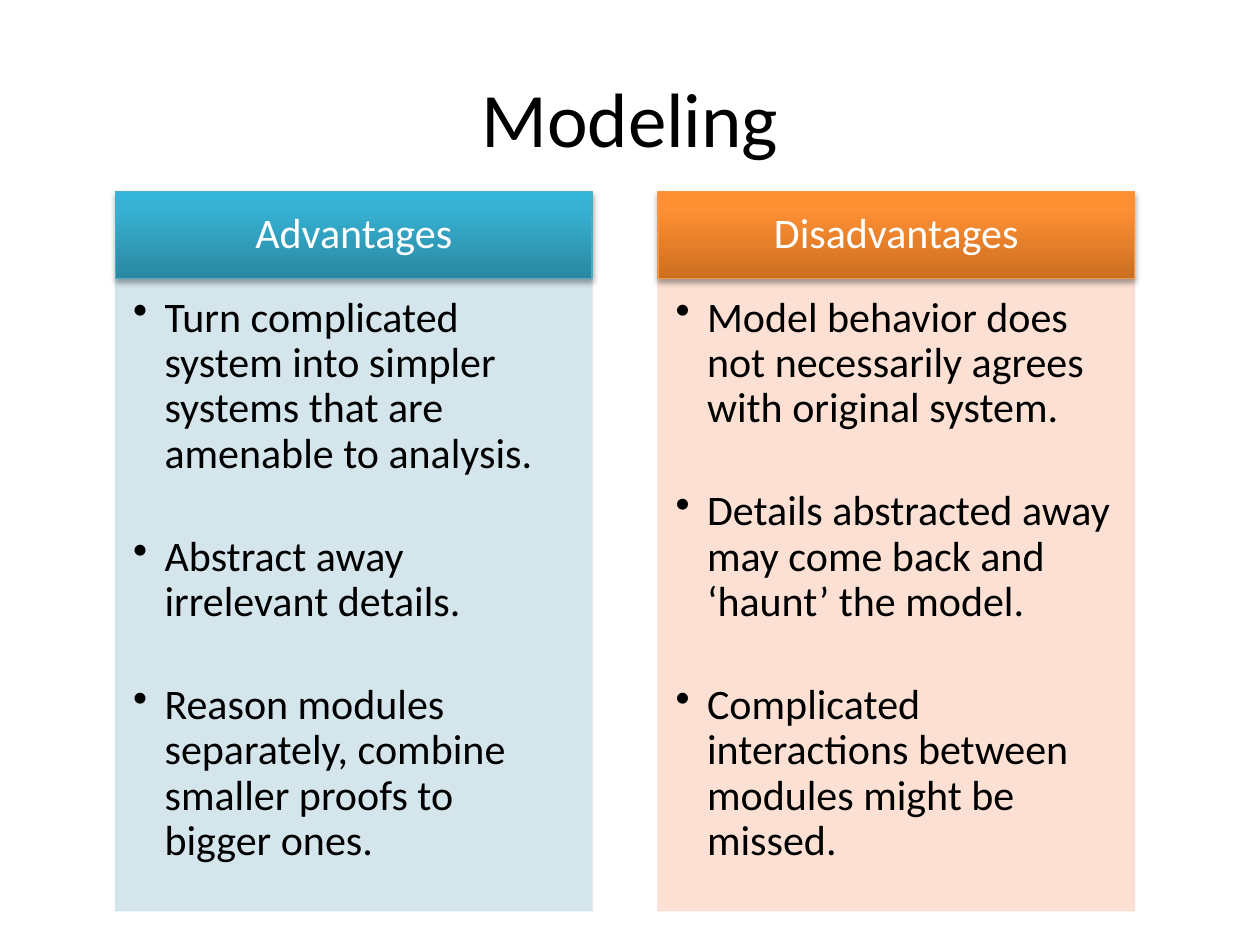
import pptx
import pptx.util
import pptx.dml.color
import pptx.enum.shapes
import pptx.enum.text
import pptx.oxml
import pptx.oxml.ns

Pt = pptx.util.Pt
ALIGN = pptx.enum.text.PP_ALIGN
ANCHOR = pptx.enum.text.MSO_ANCHOR
qn = pptx.oxml.ns.qn
NS = pptx.oxml.ns.nsdecls("a")

COLORS = {
    "text": "000000",
    "header_text": "FFFFFF",
    "blue_line": "4BACC6",
    "blue_tint": "D0E3EA",
    "orange_line": "F79646",
    "orange_tint": "FCDDCF",
}
# Header shades from bottom to top: (position in percent, colour)
SHADES = {
    "blue": [(0, "2A88A2"), (80, "37B1D2"), (100, "34B4D6")],
    "orange": [(0, "CC6E20"), (80, "FF9034"), (100, "FF9136")],
}
COLUMNS = [
    ("Advantages", "blue", [
        "Turn complicated system into simpler systems that are amenable to analysis.",
        "Abstract away irrelevant details.",
        "Reason modules separately, combine smaller proofs to bigger ones.",
    ]),
    ("Disadvantages", "orange", [
        "Model behavior does not necessarily agrees with original system.",
        "Details abstracted away may come back and ‘haunt’ the model.",
        "Complicated interactions between modules might be missed.",
    ]),
]
HEADER_HEIGHT = 49.68


def rgb(name):
    return pptx.dml.color.RGBColor.from_string(COLORS[name])


def style_paragraph(paragraph, text, size, color, align):
    paragraph.text = text
    paragraph.alignment = align
    paragraph.font.name = "Calibri"
    paragraph.font.size = Pt(size)
    paragraph.font.color.rgb = rgb(color)


def set_frame(frame, insets, anchor):
    frame.word_wrap = True
    frame.vertical_anchor = anchor
    (frame.margin_left, frame.margin_top,
     frame.margin_right, frame.margin_bottom) = [Pt(inset) for inset in insets]


def add_panel(slide, box, line_color):
    panel = slide.shapes.add_shape(
        pptx.enum.shapes.MSO_SHAPE.RECTANGLE, *[Pt(length) for length in box])
    panel.shadow.inherit = False
    panel.line.color.rgb = rgb(line_color)
    panel.line.width = Pt(0.75)
    return panel


def add_title(slide, box, text):
    title = slide.shapes.add_textbox(*[Pt(length) for length in box])
    set_frame(title.text_frame, (7.2, 3.6, 7.2, 3.6), ANCHOR.MIDDLE)
    style_paragraph(title.text_frame.paragraphs[0], text, 44, "text", ALIGN.CENTER)


def add_header(slide, box, text, hue):
    header = add_panel(slide, box, f"{hue}_line")
    # Three-stop gradient, dark at the bottom
    header.fill.gradient()
    header.fill.gradient_angle = 90
    stops = header._element.spPr.find(qn("a:gradFill")).find(qn("a:gsLst"))
    for stop in list(stops):
        stops.remove(stop)
    for position, shade in SHADES[hue]:
        stops.append(pptx.oxml.parse_xml(
            f'<a:gs {NS} pos="{position * 1000}"><a:srgbClr val="{shade}"/></a:gs>'))
    # Soft shadow below
    header._element.spPr.find(qn("a:effectLst")).append(pptx.oxml.parse_xml(
        f'<a:outerShdw {NS} blurRad="{Pt(3.1)}" dist="{Pt(1.8)}" dir="5400000" '
        'rotWithShape="0"><a:srgbClr val="000000"><a:alpha val="35000"/>'
        '</a:srgbClr></a:outerShdw>'))
    set_frame(header.text_frame, (13.68, 7.92, 13.68, 7.92), ANCHOR.MIDDLE)
    label = header.text_frame.paragraphs[0]
    style_paragraph(label, text, 24, "header_text", ALIGN.CENTER)
    label.line_spacing = 0.9


def add_points(slide, box, points, hue):
    body = add_panel(slide, box, f"{hue}_tint")
    body.fill.solid()
    body.fill.fore_color.rgb = rgb(f"{hue}_tint")
    # Fill and outline are 90 % opaque
    for color in body._element.spPr.iter(qn("a:srgbClr")):
        color.append(pptx.oxml.parse_xml(f'<a:alpha {NS} val="90000"/>'))
    frame = body.text_frame
    set_frame(frame, (10.08, 10.08, 13.68, 15.12), ANCHOR.TOP)
    for index, point in enumerate(points):
        paragraph = frame.add_paragraph() if index else frame.paragraphs[0]
        style_paragraph(paragraph, point, 24, "text", ALIGN.LEFT)
        paragraph.line_spacing = 0.9
        paragraph.space_after = Pt(33)
        properties = paragraph._p.get_or_add_pPr()
        properties.set("marL", str(Pt(18)))
        properties.set("indent", str(-Pt(18)))
        bullet = pptx.oxml.parse_xml(f'<a:buChar {NS} char="•"/>')
        properties.find(qn("a:defRPr")).addprevious(bullet)


def add_column(slide, box, heading, hue, points):
    left, top, width, height = box
    add_points(slide, (left, top + HEADER_HEIGHT, width, height - HEADER_HEIGHT),
               points, hue)
    add_header(slide, (left, top, width, HEADER_HEIGHT), heading, hue)


def main():
    deck = pptx.Presentation()
    deck.slide_width, deck.slide_height = Pt(720), Pt(540)
    slide = deck.slides.add_slide(deck.slide_layouts[6])
    add_title(slide, (36, 21.6, 648, 90), "Modeling")
    left, width, gap = 66, 272.4, 37.6
    for index, (heading, hue, points) in enumerate(COLUMNS):
        box = (left + index * (width + gap), 109.3, width, 411.2)
        add_column(slide, box, heading, hue, points)
    deck.save("out.pptx")


if __name__ == "__main__":
    main()
